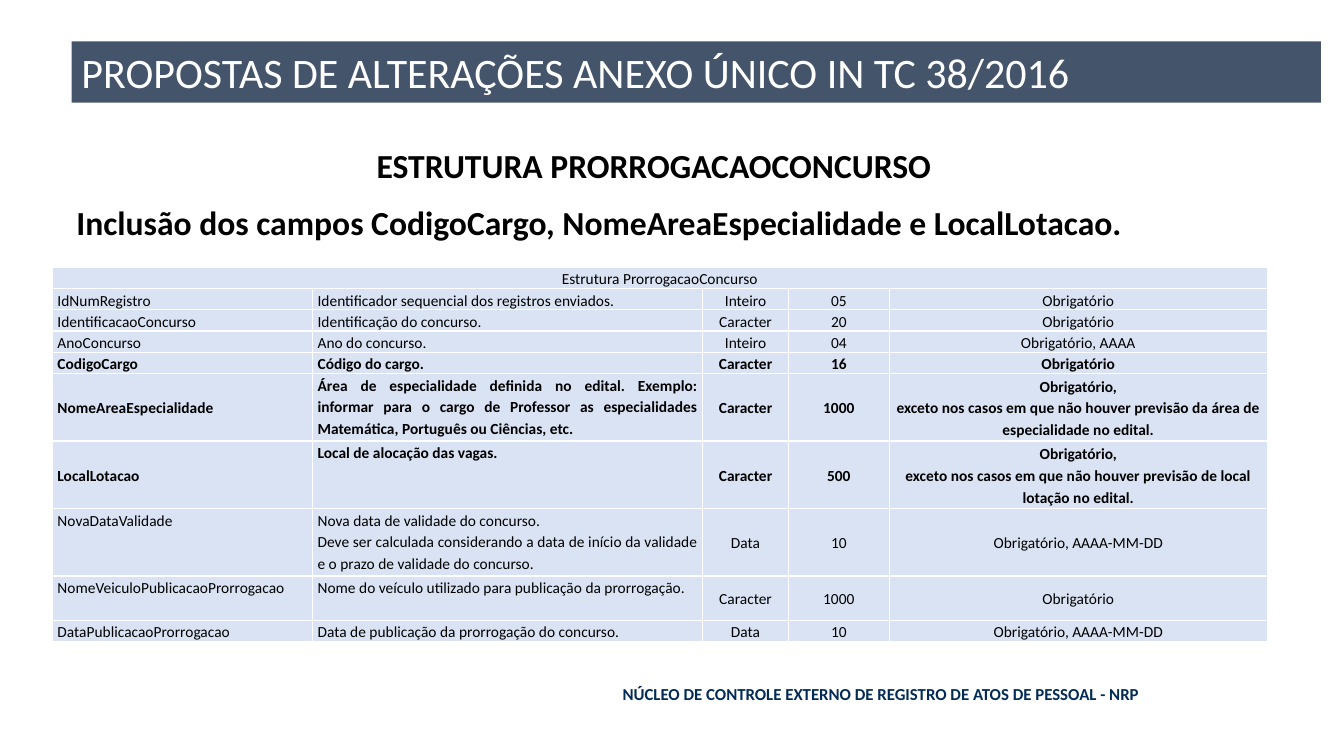
from lxml import etree
from pptx import Presentation
from pptx.dml.color import RGBColor
from pptx.enum.shapes import MSO_SHAPE as Shape
from pptx.enum.text import MSO_ANCHOR as Anchor, PP_ALIGN as Align
from pptx.oxml.ns import qn
from pptx.util import Inches, Pt

TITLE = "PROPOSTAS DE ALTERAÇÕES ANEXO ÚNICO IN TC 38/2016"
HEADING = "ESTRUTURA PRORROGACAOCONCURSO"
CHANGE = "Inclusão dos campos CodigoCargo, NomeAreaEspecialidade e LocalLotacao."
FOOTER = "NÚCLEO DE CONTROLE EXTERNO DE REGISTRO DE ATOS DE PESSOAL - NRP"
CAPTION = "Estrutura ProrrogacaoConcurso"
FIELDS = [
    ("IdNumRegistro", "Identificador sequencial dos registros enviados.",
     "Inteiro", "05", "Obrigatório"),
    ("IdentificacaoConcurso", "Identificação do concurso.",
     "Caracter", "20", "Obrigatório"),
    ("AnoConcurso", "Ano do concurso.", "Inteiro", "04", "Obrigatório, AAAA"),
    ("CodigoCargo", "Código do cargo.", "Caracter", "16", "Obrigatório"),
    ("NomeAreaEspecialidade",
     "Área de especialidade definida no edital. Exemplo: informar para o cargo "
     "de Professor as especialidades Matemática, Português ou Ciências, etc.",
     "Caracter", "1000",
     "Obrigatório,\nexceto nos casos em que não houver previsão da área de "
     "especialidade no edital."),
    ("LocalLotacao", "Local de alocação das vagas.", "Caracter", "500",
     "Obrigatório,\nexceto nos casos em que não houver previsão de local "
     "lotação no edital."),
    ("NovaDataValidade",
     "Nova data de validade do concurso.\nDeve ser calculada considerando a "
     "data de início da validade e o prazo de validade do concurso.",
     "Data", "10", "Obrigatório, AAAA-MM-DD"),
    ("NomeVeiculoPublicacaoProrrogacao",
     "Nome do veículo utilizado para publicação da prorrogação.",
     "Caracter", "1000", "Obrigatório"),
    ("DataPublicacaoProrrogacao",
     "Data de publicação da prorrogação do concurso.",
     "Data", "10", "Obrigatório, AAAA-MM-DD"),
]
ADDED = {"CodigoCargo", "NomeAreaEspecialidade", "LocalLotacao"}
TOP = {"IdNumRegistro", "NovaDataValidade",
       "NomeVeiculoPublicacaoProrrogacao", "DataPublicacaoProrrogacao"}
WIDTHS = [2.58, 3.87, 0.85, 1, 3.75]
HEIGHTS = [0.21] * 5 + [0.67] * 3 + [0.44, 0.21]
ALIGNS = [Align.LEFT, Align.JUSTIFY] + [Align.CENTER] * 3

FONT = "Calibri"
WHITE = RGBColor(0xFF, 0xFF, 0xFF)
BLACK = RGBColor(0, 0, 0)
SLATE = RGBColor(0x44, 0x54, 0x6A)
NAVY = RGBColor(0x03, 0x2B, 0x55)
PALE = RGBColor(0xDA, 0xE3, 0xF3)


def style(para, size, color, bold=False, align=Align.LEFT):
    para.alignment = align
    for run in para.runs:
        font = run.font
        font.name, font.size, font.bold = FONT, Pt(size), bold
        font.color.rgb = color


def add_text(slide, box, text):
    frame = slide.shapes.add_textbox(*map(Inches, box)).text_frame
    frame.word_wrap = True
    frame.text = text
    return frame.paragraphs


def add_borders(cell):
    props = cell._tc.get_or_add_tcPr()
    for side in ("lnL", "lnR", "lnT", "lnB"):
        line = etree.SubElement(props, qn(f"a:{side}"), w=str(Pt(1)))
        fill = etree.SubElement(line, qn("a:solidFill"))
        etree.SubElement(fill, qn("a:srgbClr"), val=str(WHITE))


def fill_cell(cell, text, align, bold, anchor):
    add_borders(cell)
    cell.fill.solid()
    cell.fill.fore_color.rgb = PALE
    cell.margin_left = cell.margin_right = Inches(0.05)
    cell.margin_top = cell.margin_bottom = 0
    cell.vertical_anchor = anchor
    cell.text_frame.text = text
    for para in cell.text_frame.paragraphs:
        style(para, 11, BLACK, bold, align)
        para.line_spacing = 1.15


def add_fields(slide):
    table = slide.shapes.add_table(
        len(HEIGHTS), len(WIDTHS), Inches(0.52), Inches(2.65),
        Inches(sum(WIDTHS)), Inches(sum(HEIGHTS))).table
    table.first_row = table.horz_banding = False
    for col, width in zip(table.columns, WIDTHS):
        col.width = Inches(width)
    for row, height in zip(table.rows, HEIGHTS):
        row.height = Inches(height)

    table.cell(0, 0).merge(table.cell(0, len(WIDTHS) - 1))
    fill_cell(table.cell(0, 0), CAPTION, Align.CENTER, False, Anchor.TOP)
    for r, field in enumerate(FIELDS, 1):
        name = field[0]
        for c, text in enumerate(field):
            high = c == 1 or (c == 0 and name in TOP)
            fill_cell(table.cell(r, c), text, ALIGNS[c], name in ADDED,
                      Anchor.TOP if high else Anchor.MIDDLE)


def main():
    deck = Presentation()
    deck.slide_width, deck.slide_height = Inches(13.33), Inches(7.5)
    slide = deck.slides.add_slide(deck.slide_layouts[6])

    foot = add_text(slide, (1.57, 6.73, 9.83, 0.3), FOOTER)
    style(foot[0], 12, NAVY, True, Align.RIGHT)

    bar = slide.shapes.add_shape(
        Shape.RECTANGLE, *map(Inches, (0.71, 0.41, 12.39, 0.61)))
    bar.shadow.inherit = False
    bar.fill.solid()
    bar.fill.fore_color.rgb = SLATE
    bar.line.fill.background()
    bar.text_frame.text = TITLE
    bar.text_frame.vertical_anchor = Anchor.TOP
    style(bar.text_frame.paragraphs[0], 30, WHITE)

    head, change = add_text(slide, (0.66, 1.39, 11.65, 1.23),
                            f"{HEADING}\n{CHANGE}")
    style(head, 24, BLACK, True, Align.CENTER)
    style(change, 24, BLACK, True)
    change.space_before = Pt(12)

    add_fields(slide)
    deck.save("out.pptx")


if __name__ == "__main__":
    main()
